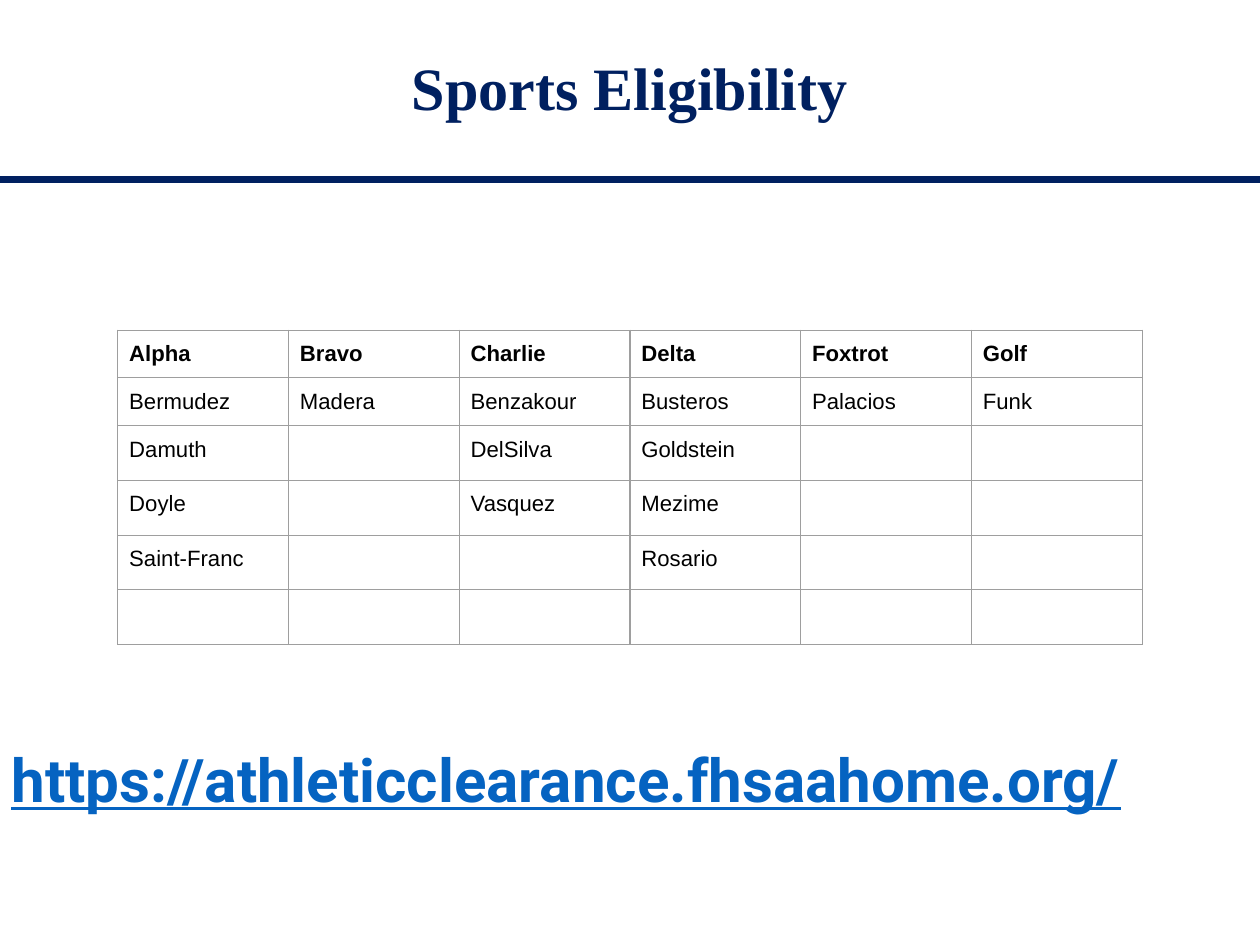
from lxml.etree import SubElement
from pptx import Presentation
from pptx.dml.color import RGBColor
from pptx.enum.shapes import MSO_CONNECTOR
from pptx.enum.text import MSO_ANCHOR, MSO_AUTO_SIZE, PP_ALIGN
from pptx.oxml.ns import qn
from pptx.util import Inches, Pt

TITLE = "Sports Eligibility"
ADDRESS = "https://athleticclearance.fhsaahome.org/"
TEAMS = {
    "Alpha": ["Bermudez", "Damuth", "Doyle", "Saint-Franc"],
    "Bravo": ["Madera"],
    "Charlie": ["Benzakour", "DelSilva", "Vasquez"],
    "Delta": ["Busteros", "Goldstein", "Mezime", "Rosario"],
    "Foxtrot": ["Palacios"],
    "Golf": ["Funk"],
}

NAVY = RGBColor(0x00, 0x20, 0x60)
LINK_BLUE = RGBColor(0x05, 0x63, 0xC1)
BLACK = RGBColor(0x00, 0x00, 0x00)
WHITE = RGBColor(0xFF, 0xFF, 0xFF)
GRID_GRAY = RGBColor(0x9E, 0x9E, 0x9E)

WIDTH, HEIGHT = Inches(11.07), Inches(8.3)
RULE_TOP = Inches(1.58)
COLUMN_WIDTH = Inches(1.5)
ROW_HEIGHTS = [Inches(0.42)] * 2 + [Inches(0.48)] * 4
TABLE_TOP = Inches(2.9)
CELL_MARGIN = Inches(0.1)

TITLE_FONT = {"name": "Times New Roman", "size": Pt(38), "bold": True}
ADDRESS_FONT = {"name": "Roboto", "size": Pt(38), "bold": True, "underline": True}
CELL_FONT = {"name": "Arial", "size": Pt(14)}


def set_font(font, values, color):
    for name, value in values.items():
        setattr(font, name, value)
    font.color.rgb = color


def fill_placeholder(shape, text, box, anchor, values, color):
    shape.left, shape.top, shape.width, shape.height = box
    frame = shape.text_frame
    frame.auto_size = MSO_AUTO_SIZE.NONE
    frame.vertical_anchor = anchor
    paragraph = frame.paragraphs[0]
    paragraph.space_before = Pt(0)
    run = paragraph.add_run()
    run.text = text
    set_font(run.font, values, color)
    return paragraph


def draw_borders(cell):
    properties = cell._tc.get_or_add_tcPr()
    for side in ("lnL", "lnR", "lnT", "lnB"):
        line = SubElement(properties, qn(f"a:{side}"), w=str(Pt(0.75)))
        fill = SubElement(line, qn("a:solidFill"))
        SubElement(fill, qn("a:srgbClr"), val=str(GRID_GRAY))


def add_team_table(slide):
    table_width = COLUMN_WIDTH * len(TEAMS)
    table = slide.shapes.add_table(
        len(ROW_HEIGHTS), len(TEAMS), (WIDTH - table_width) // 2, TABLE_TOP,
        table_width, sum(ROW_HEIGHTS)).table
    table.first_row = table.horz_banding = False
    for row, height in zip(table.rows, ROW_HEIGHTS):
        row.height = height
    for column, (team, members) in enumerate(TEAMS.items()):
        table.columns[column].width = COLUMN_WIDTH
        names = [team, *members]
        for row in range(len(ROW_HEIGHTS)):
            cell = table.cell(row, column)
            draw_borders(cell)
            cell.fill.solid()
            cell.fill.fore_color.rgb = WHITE
            cell.margin_left = cell.margin_right = CELL_MARGIN
            if row < len(names):
                cell.margin_top = cell.margin_bottom = CELL_MARGIN
                run = cell.text_frame.paragraphs[0].add_run()
                run.text = names[row]
                set_font(run.font, {**CELL_FONT, "bold": row == 0}, BLACK)


def main():
    presentation = Presentation()
    presentation.slide_width, presentation.slide_height = WIDTH, HEIGHT
    slide = presentation.slides.add_slide(presentation.slide_layouts[1])

    rule = slide.shapes.add_connector(
        MSO_CONNECTOR.STRAIGHT, 0, RULE_TOP, WIDTH, RULE_TOP)
    rule.line.color.rgb = NAVY
    rule.line.width = Pt(4.5)
    SubElement(rule._element.spPr, qn("a:effectLst"))

    title_box = (Inches(0.76), 0, WIDTH - 2 * Inches(0.76), Inches(1.6))
    title = fill_placeholder(slide.shapes.title, TITLE, title_box,
                             MSO_ANCHOR.MIDDLE, TITLE_FONT, NAVY)
    title.alignment = PP_ALIGN.CENTER
    title.line_spacing = 0.9

    address_box = (0, Inches(6.47), WIDTH, Inches(1.44))
    address = fill_placeholder(slide.placeholders[1], ADDRESS, address_box,
                               MSO_ANCHOR.TOP, ADDRESS_FONT, LINK_BLUE)
    properties = address._p.get_or_add_pPr()
    properties.set("marL", "0")
    properties.set("indent", "0")
    SubElement(properties, qn("a:buNone"))

    add_team_table(slide)
    presentation.save("out.pptx")


if __name__ == "__main__":
    main()
